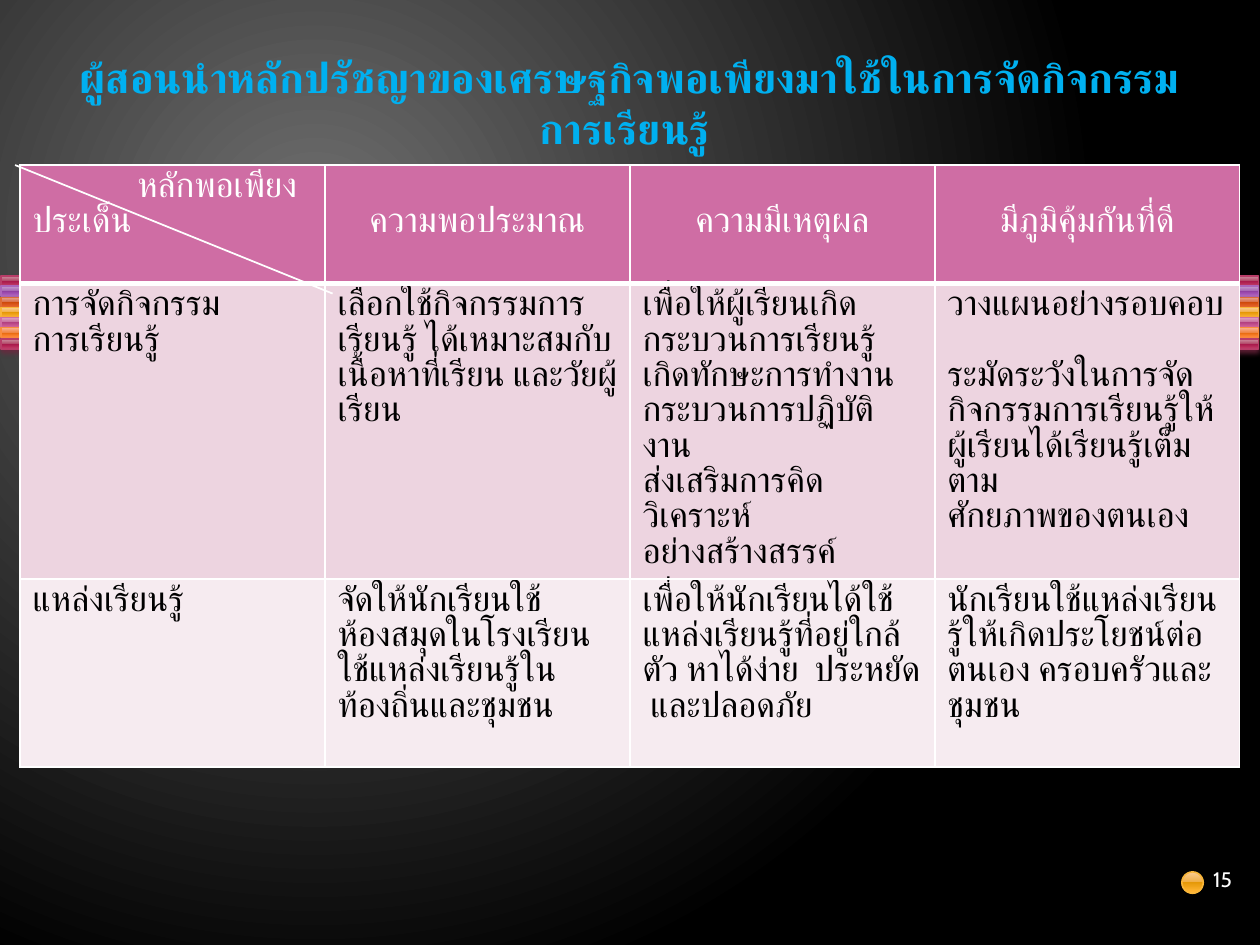
"""Build the slide on sufficiency principles in learning activities."""
from dataclasses import dataclass

from lxml import etree
from pptx import Presentation
from pptx.dml.color import RGBColor
from pptx.enum import shapes, text
from pptx.oxml import ns
from pptx.util import Inches, Pt


@dataclass(frozen=True)
class Theme:
    """Colours, fonts and type sizes."""
    white: str = "FFFFFF"
    black: str = "000000"
    title: str = "00B0F0"
    head: str = "CF6DA4"
    rows: tuple = ("EDD4E0", "F6EBF0")
    back: tuple = ((0, "707070"), (100, "000000"))
    thai: str = "Calibri"
    latin: str = "Cabin"
    big: int = 24
    cell: int = 20
    pitch: float = 20.2
    small: int = 12


@dataclass(frozen=True)
class Tint:
    """Line, shadow and gradient colours of one band."""
    line: str
    shade: str
    fades: tuple


@dataclass(frozen=True)
class Box:
    """Place and size in inches."""
    left: float
    top: float
    width: float
    height: float

    def emu(self) -> list:
        """Return the four lengths."""
        return [Inches(n) for n in (self.left, self.top, self.width, self.height)]


THEME = Theme()
STOPS = (0, 49, 49, 92, 100)
ROSE = Tint("B83D68", "722640", ("CE94A2", "B34869", "A61749", "C13764", "CA5D7C"))
PLUM = Tint("AC66BB", "6A3F73", ("C6A2D0", "A666B4", "8F3EA1", "AD5DBF", "BA76CA"))
RUST = Tint("DE6C36", "894321", ("E7A493", "D66B42", "CC4809", "E9642C", "F07B55"))
GOLD = Tint("F9B639", "9A7023", ("FBCC93", "EFAE43", "E59807", "FFB432", "FFBE5F"))
PINK = Tint("CF6DA4", "804365", ("DDA4C1", "C66B9D", "B34181", "D361A0", "DC79AE"))
CORAL = Tint("FA8D3D", "9A5726", ("FBB494", "F08745", "E5670B", "FF8736", "FF9961"))
BANDS = (ROSE, PLUM, RUST, GOLD, PINK, CORAL, ROSE)

HEADS = ("หลักพอเพียง\nประเด็น", "ความพอประมาณ", "ความมีเหตุผล", "มีภูมิคุ้มกันที่ดี")
BODY = (
    ("การจัดกิจกรรม\nการเรียนรู้",
     "เลือกใช้กิจกรรมการเรียนรู้ ได้เหมาะสมกับเนื้อหาที่เรียน และวัยผู้เรียน",
     "เพื่อให้ผู้เรียนเกิด\nกระบวนการเรียนรู้  เกิดทักษะการทำงาน กระบวนการปฏิบัติงาน\n"
     "ส่งเสริมการคิดวิเคราะห์\nอย่างสร้างสรรค์",
     "วางแผนอย่างรอบคอบ\nระมัดระวังในการจัด\nกิจกรรมการเรียนรู้ให้\n"
     "ผู้เรียนได้เรียนรู้เต็มตาม\nศักยภาพของตนเอง"),
    ("แหล่งเรียนรู้",
     "จัดให้นักเรียนใช้\nห้องสมุดในโรงเรียน\nใช้แหล่งเรียนรู้ใน\nท้องถิ่นและชุมชน",
     "เพื่อให้นักเรียนได้ใช้  แหล่งเรียนรู้ที่อยู่ใกล้ตัว หาได้ง่าย  ประหยัด  และปลอดภัย",
     "นักเรียนใช้แหล่งเรียนรู้ให้เกิดประโยชน์ต่อตนเอง ครอบครัวและชุมชน"),
)
HIGHS = (0.94, 2.33, 1.49)


def add(node, tag: str, **attrs):
    """Append a DrawingML element."""
    return etree.SubElement(node, ns.qn(tag), {k: str(v) for k, v in attrs.items()})


def fade(node, stops) -> None:
    """Replace the stops of a gradient."""
    group = next(node.iter(ns.qn("a:gsLst")))
    for old in list(group):
        group.remove(old)
    for pos, tone in stops:
        add(add(group, "a:gs", pos=pos * 1000), "a:srgbClr", val=tone)


def style(para, size: int, tone: str, face: str, bold: bool = False) -> None:
    """Set the font of a paragraph."""
    font = para.font
    font.size, font.bold, font.name = Pt(size), bold, face
    font.color.rgb = RGBColor.from_string(tone)
    add(font._element, "a:cs", typeface=face)


def gem(slide, kind, box: Box, tint: Tint, shade: bool) -> None:
    """Draw a glossy shape."""
    shape = slide.shapes.add_shape(kind, *box.emu())
    shape.fill.gradient()
    shape.fill.gradient_angle = 270
    fade(shape._element, zip(STOPS, tint.fades))
    shape.line.color.rgb = RGBColor.from_string(tint.line)
    shape.line.width = Pt(0.9)
    shape.shadow.inherit = False
    if shade:
        effects = next(shape._element.iter(ns.qn("a:effectLst")))
        cast = add(effects, "a:outerShdw", blurRad=Pt(3.1), dist=Pt(2),
                   dir=5400000, rotWithShape=0)
        add(add(cast, "a:srgbClr", val=tint.shade), "a:alpha", val=83000)


def fill(cell, words: str, tone: str, ink: str, base: int) -> None:
    """Fill one table cell."""
    props = cell._tc.get_or_add_tcPr()
    for side, width in (("L", 1), ("R", 1), ("T", 1), ("B", base)):
        edge = add(props, f"a:ln{side}", w=Pt(width))
        add(add(edge, "a:solidFill"), "a:srgbClr", val=THEME.white)
    cell.fill.solid()
    cell.fill.fore_color.rgb = RGBColor.from_string(tone)
    cell.text = words
    for para in cell.text_frame.paragraphs:
        para.line_spacing = Pt(THEME.pitch)
        style(para, THEME.cell, ink, THEME.thai)


def grid(slide) -> None:
    """Draw the table of principles."""
    box = Box(0.16, 1.31, 9.68, sum(HIGHS))
    table = slide.shapes.add_table(len(HIGHS), len(HEADS), *box.emu()).table
    for row, high in zip(table.rows, HIGHS):
        row.height = Inches(high)
    for col, words in enumerate(HEADS):
        cell = table.cell(0, col)
        fill(cell, words, THEME.head, THEME.white, 3)
        if col:
            cell.vertical_anchor = text.MSO_ANCHOR.MIDDLE
            cell.text_frame.paragraphs[0].alignment = text.PP_ALIGN.CENTER
    for row, (line, tone) in enumerate(zip(BODY, THEME.rows), 1):
        for col, words in enumerate(line):
            fill(table.cell(row, col), words, tone, THEME.black, 1)
    lead = table.cell(0, 0).text_frame.paragraphs[0]
    lead._p.get_or_add_pPr().set("marL", str(Inches(0.83)))
    table.cell(1, 3).text_frame.paragraphs[0].space_after = Pt(THEME.pitch)


def slash(slide) -> None:
    """Draw the diagonal across the corner cell."""
    ends = [Inches(n) for n in (0.12, 1.31, 2.64, 2.33)]
    line = slide.shapes.add_connector(shapes.MSO_CONNECTOR.STRAIGHT, *ends)
    line.line.color.rgb = RGBColor.from_string(THEME.white)
    line.line.width = Pt(1)
    add(line._element.spPr, "a:effectLst")


def label(slide) -> None:
    """Write the title and the page number."""
    title = slide.shapes.title
    title.left, title.top, title.width, title.height = Box(0.35, 0.36, 9.29, 0.91).emu()
    title.text = "ผู้สอนนำหลักปรัชญาของเศรษฐกิจพอเพียงมาใช้ในการจัดกิจกรรมการเรียนรู้ "
    title.text_frame.vertical_anchor = text.MSO_ANCHOR.TOP
    para = title.text_frame.paragraphs[0]
    para.alignment = text.PP_ALIGN.CENTER
    style(para, THEME.big, THEME.title, THEME.thai, True)
    page = slide.shapes.add_textbox(*Box(9.53, 6.73, 0.47, 0.5).emu()).text_frame
    page.word_wrap = True
    page.vertical_anchor = text.MSO_ANCHOR.MIDDLE
    page.text = "15"
    style(page.paragraphs[0], THEME.small, THEME.white, THEME.latin)


def main() -> None:
    """Build and save the slide."""
    deck = Presentation()
    deck.slide_width, deck.slide_height = Inches(10), Inches(7.5)
    slide = deck.slides.add_slide(deck.slide_layouts[5])
    slide.background.fill.gradient()
    fade(slide._element, THEME.back)
    lin = next(slide._element.iter(ns.qn("a:lin")))
    glow = lin.getparent()
    glow.remove(lin)
    add(add(glow, "a:path", path="circle"), "a:fillToRect",
        l=50000, t=50000, r=100000, b=100000)
    kinds = shapes.MSO_SHAPE
    for left, width in ((0.01, 0.15), (9.39, 0.6)):
        for step, tint in enumerate(BANDS):
            box = Box(left, round(2.19 + step * 0.083, 2), width, 0.08)
            gem(slide, kinds.RECTANGLE, box, tint, True)
    gem(slide, kinds.OVAL, Box(9.38, 6.92, 0.17, 0.17), GOLD, False)
    grid(slide)
    slash(slide)
    label(slide)
    deck.save("out.pptx")


if __name__ == "__main__":
    main()
